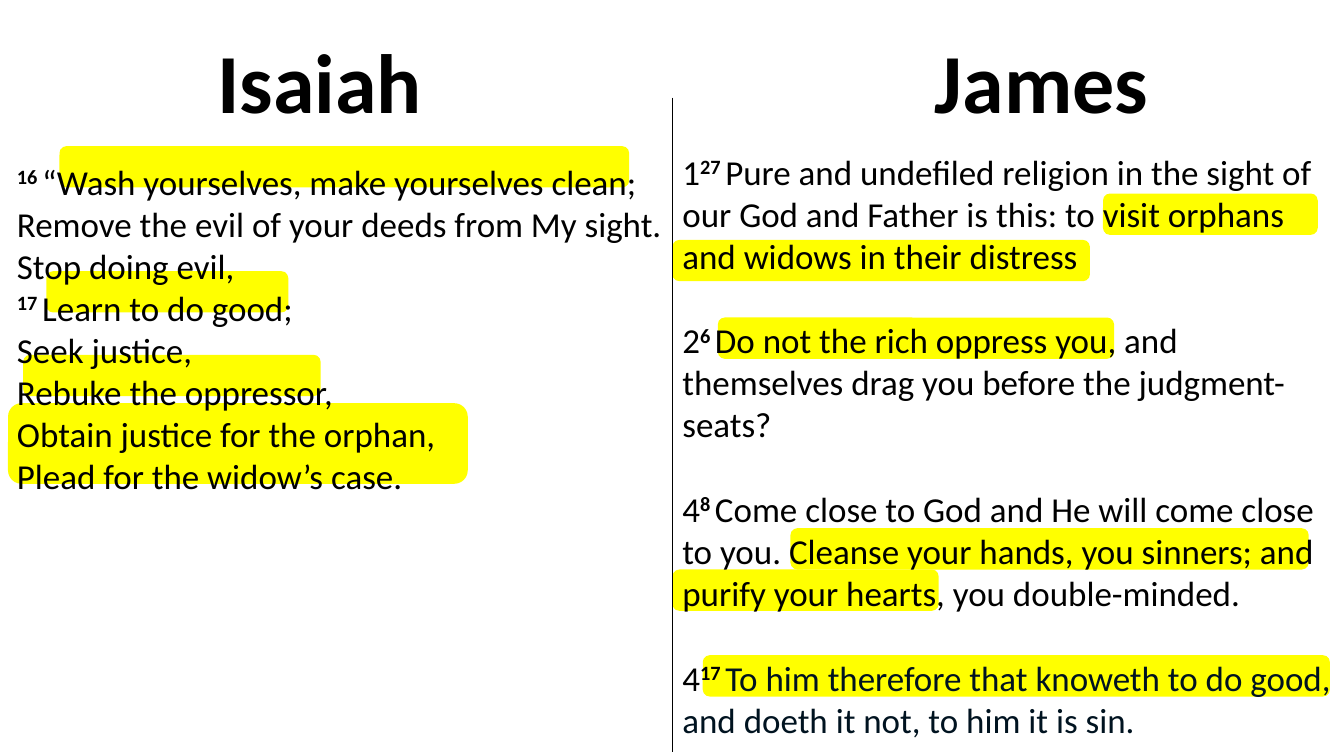
import pptx
import pptx.dml.color
import pptx.enum.shapes
import pptx.enum.text
import pptx.util
from lxml import etree

PX = 9144
BLACK = pptx.dml.color.RGBColor(0, 0, 0)
NAVY = pptx.dml.color.RGBColor(0x00, 0x13, 0x20)
YELLOW = pptx.dml.color.RGBColor(0xFF, 0xFF, 0)
FONT = "Calibri"
LINE_HEIGHT = 30.5

ISAIAH = {
    "title": "Isaiah",
    "title_box": (67, 17, 500, 113),
    "text_box": (7, 154, 670, 333),
    "gap": 0,
    "highlights": [
        (59, 145, 565, 41),
        (46, 269, 240, 41),
        (23, 352, 295, 41),
        (8, 400, 456, 80),
    ],
    "verses": [
        ("", "16 ", "“Wash yourselves, make yourselves clean;", BLACK),
        ("", "", "Remove the evil of your deeds from My sight.", BLACK),
        ("", "", "Stop doing evil,", BLACK),
        ("", "17 ", "Learn to do good;", BLACK),
        ("", "", "Seek justice,", BLACK),
        ("", "", "Rebuke the oppressor,", BLACK),
        ("", "", "Obtain justice for the orphan,", BLACK),
        ("", "", "Plead for the widow’s case.", BLACK),
    ],
}

JAMES = {
    "title": "James",
    "title_box": (116, 17, 500, 113),
    "text_box": (0, 144, 670, 599),
    "gap": LINE_HEIGHT,
    "highlights": [
        (427, 192, 213, 41),
        (0, 238, 414, 41),
        (45, 315, 393, 41),
        (117, 524, 514, 41),
        (0, 565, 264, 41),
        (30, 650, 622, 41),
    ],
    "verses": [
        ("1", "27 ", "Pure and undefiled religion in the sight of our God and Father is this: "
         "to visit orphans and widows in their distress", BLACK),
        ("2", "6 ", "Do not the rich oppress you, and themselves drag you before the "
         "judgment-seats?", BLACK),
        ("4", "8 ", "Come close to God and He will come close to you. Cleanse your hands, "
         "you sinners; and purify your hearts, you double-minded.", BLACK),
        ("4", "17 ", "To him therefore that knoweth to do good, and doeth it not, "
         "to him it is sin.", NAVY),
    ],
}


def place(box, left, top):
    """Turn a px box inside a region into EMU slide coordinates."""
    x, y, width, height = box
    return [value * PX for value in (left + x, top + y, width, height)]


def add_run(paragraph, text, size, color, bold=False):
    """Append one formatted run and return it."""
    run = paragraph.add_run()
    run.text = text
    run.font.name = FONT
    run.font.size = pptx.util.Pt(size)
    run.font.color.rgb = color
    run.font.bold = bold
    return run


def add_text_frame(slide, position):
    """Add a wrapping text box and return its frame."""
    text_frame = slide.shapes.add_textbox(*position).text_frame
    text_frame.word_wrap = True
    return text_frame


def add_highlight(slide, position):
    """Add a yellow marker bar."""
    shape = slide.shapes.add_shape(
        pptx.enum.shapes.MSO_SHAPE.ROUNDED_RECTANGLE, *position)
    shape.shadow.inherit = False
    shape.fill.solid()
    shape.fill.fore_color.rgb = YELLOW
    shape.line.fill.background()


def add_title(slide, text, position):
    """Add the centred name of a book."""
    paragraph = add_text_frame(slide, position).paragraphs[0]
    paragraph.alignment = pptx.enum.text.PP_ALIGN.CENTER
    paragraph.line_spacing = 1.07
    add_run(paragraph, text, 60, BLACK, True)


def add_verses(slide, verses, gap, position):
    """Add verses with raised verse numbers."""
    text_frame = add_text_frame(slide, position)
    for index, (chapter, number, text, color) in enumerate(verses):
        paragraph = text_frame.add_paragraph() if index else text_frame.paragraphs[0]
        if index and gap:
            paragraph.space_before = pptx.util.Pt(gap)
        if chapter:
            add_run(paragraph, chapter, 25, BLACK)
        if number:
            run = add_run(paragraph, number, 25, BLACK, True)
            run._r.get_or_add_rPr().set("baseline", "30000")
        add_run(paragraph, text, 25, color)


def add_book(slide, book, left, top):
    """Add one book's column: markers, title and verses."""
    for box in book["highlights"]:
        add_highlight(slide, place(box, left, top))
    add_title(slide, book["title"], place(book["title_box"], left, top))
    add_verses(slide, book["verses"], book["gap"], place(book["text_box"], left, top))


def add_divider(slide, x, top, bottom):
    """Add the thin vertical line between the columns."""
    connector = slide.shapes.add_connector(
        pptx.enum.shapes.MSO_CONNECTOR.STRAIGHT, x * PX, top * PX, x * PX, bottom * PX)
    connector.line.color.rgb = BLACK
    connector.line.width = pptx.util.Pt(0.5)
    etree.SubElement(connector._element.spPr, pptx.oxml.ns.qn("a:effectLst"))


def main():
    """Build and save the slide."""
    presentation = pptx.Presentation()
    presentation.slide_width = 1333 * PX
    presentation.slide_height = 750 * PX
    slide = presentation.slides.add_slide(presentation.slide_layouts[6])
    add_book(slide, ISAIAH, 0, 0)
    add_book(slide, JAMES, 667, 0)
    add_divider(slide, 667, 97, 746)
    presentation.save("out.pptx")


if __name__ == "__main__":
    main()
